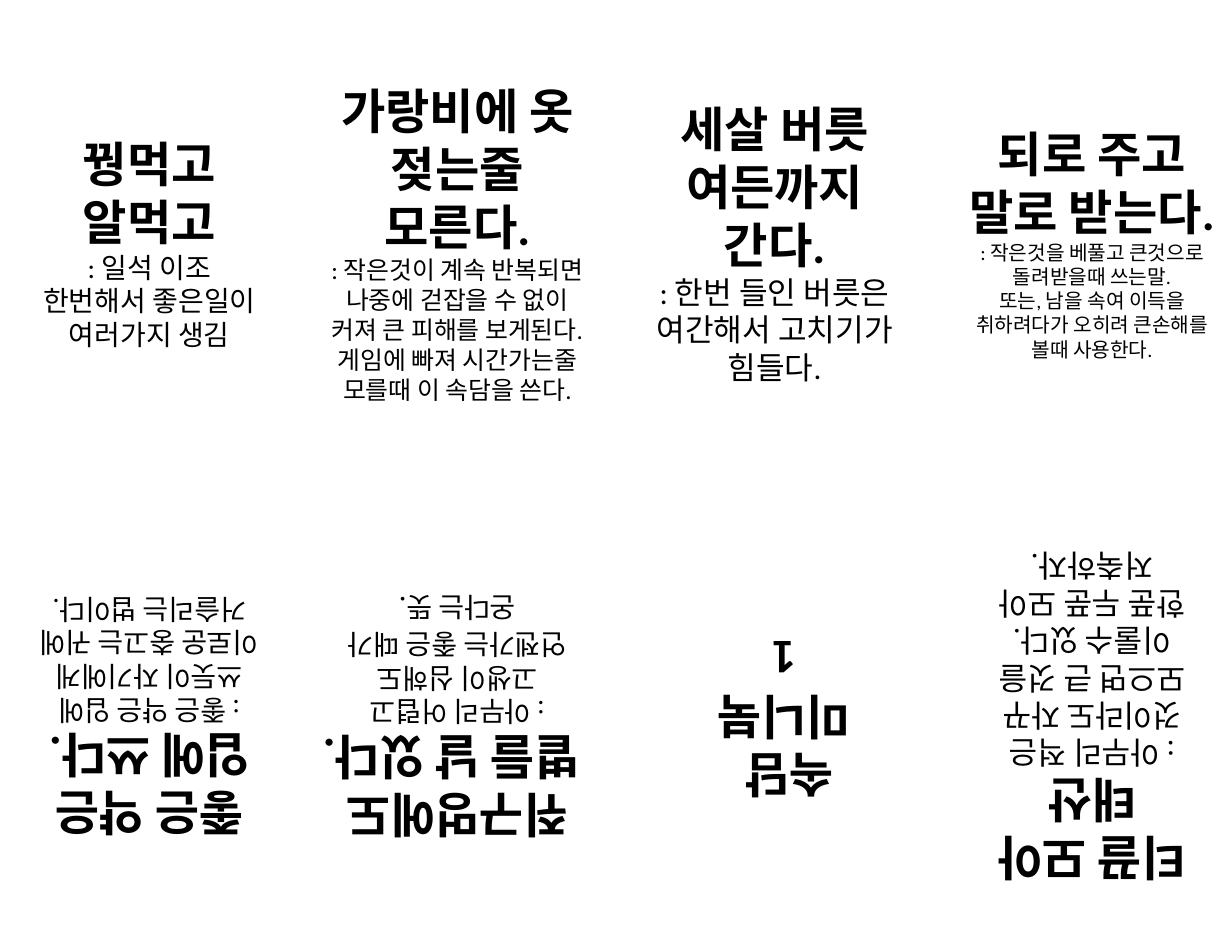
from pptx import Presentation
from pptx.dml.color import RGBColor
from pptx.enum.dml import MSO_LINE
from pptx.enum.shapes import MSO_SHAPE
from pptx.enum.text import MSO_ANCHOR, PP_ALIGN
from pptx.util import Pt

WHITE = RGBColor(0xFF, 0xFF, 0xFF)
BLACK = RGBColor(0x00, 0x00, 0x00)

PAGE_W, PAGE_H = Pt(180), Pt(288)
TOP_ROW, BOTTOM_ROW = Pt(12), Pt(318)
COLUMNS = [Pt(6), Pt(204), Pt(408), Pt(612)]
COVER_LEFT = Pt(414)

FRAME = {"word_wrap": True, "vertical_anchor": MSO_ANCHOR.MIDDLE,
         "margin_left": Pt(8), "margin_right": Pt(8),
         "margin_top": Pt(4), "margin_bottom": Pt(4)}
HEADING = {"name": "Calibri", "size": Pt(31), "bold": True}
BODY = {"name": "Calibri", "bold": False}

# Each page: proverb, body size, explanation paragraphs
TOP_PAGES = [
    ("꿩먹고 알먹고", 18, [": 일석 이조", "한번해서 좋은일이 여러가지 생김"]),
    ("가랑비에 옷 젖는줄 모른다.", 16,
     [": 작은것이 계속 반복되면 나중에 걷잡을 수 없이 커져 큰 피해를 보게된다. "
      "게임에 빠져 시간가는줄 모를때 이 속담을 쓴다."]),
    ("세살 버릇 여든까지 간다.", 20,
     [": 한번 들인 버릇은 여간해서 고치기가 힘들다."]),
    ("되로 주고 말로 받는다.", 13,
     [": 작은것을 베풀고 큰것으로 돌려받을때 쓰는말.",
      "또는, 남을 속여 이득을 취하려다가 오히려 큰손해를 볼때 사용한다."]),
]
BOTTOM_PAGES = [
    ("좋은 약은 입에 쓰다.", 18,
     [": 좋은 약은 입에 쓰듯이 자기에게 이로운 충고는 귀에 거슬리는 법이다."]),
    ("쥐구멍에도 볕들 날 있다.", 18,
     [": 아무리 어렵고 고생이 심해도 언젠가는 좋은 때가 온다는 뜻"]),
    None,  # the cover takes this place
    ("티끌 모아 태산", 20,
     [": 아무리 적은 것이라도 자꾸 모으면 큰 것을 이룰수 있다.",
      "한푼 두푼 모아 저축하자."]),
]
COVER_LINES = ["속담 ", "미니북", "1"]


def apply(target, values):
    for name, value in values.items():
        setattr(target, name, value)


def add_page(s, left, top):
    """Add one booklet page; the bottom row is upside down for folding."""
    sp = s.shapes.add_shape(MSO_SHAPE.RECTANGLE, left, top, PAGE_W, PAGE_H)
    sp.shadow.inherit = False
    sp.rotation = 180 if top == BOTTOM_ROW else 0
    sp.fill.solid()
    sp.fill.fore_color.rgb = WHITE
    sp.line.color.rgb = WHITE
    apply(sp.line, {"width": Pt(0.25), "dash_style": MSO_LINE.DASH})
    apply(sp.text_frame, FRAME)
    return sp.text_frame


def add_run(p, text, font):
    r = p.add_run()
    r.text = text
    apply(r.font, font)
    r.font.color.rgb = BLACK


def add_paragraphs(tf, lines):
    """Write (text, font) pairs as centred paragraphs."""
    for i, (text, font) in enumerate(lines):
        p = tf.add_paragraph() if i else tf.paragraphs[0]
        p.alignment = PP_ALIGN.CENTER
        add_run(p, text, font)


def add_proverb(s, left, top, proverb, size, explanation):
    tf = add_page(s, left, top)
    body = {**BODY, "size": Pt(size)}
    add_paragraphs(tf, [(proverb, HEADING)] + [(t, body) for t in explanation])
    return tf


def main():
    prs = Presentation()
    prs.slide_width, prs.slide_height = Pt(792), Pt(612)
    s = prs.slides.add_slide(prs.slide_layouts[6])

    # Proverb pages
    frames = {}
    for top, pages in ((TOP_ROW, TOP_PAGES), (BOTTOM_ROW, BOTTOM_PAGES)):
        for left, page in zip(COLUMNS, pages):
            if page:
                frames[page[0]] = add_proverb(s, left, top, *page)

    # Larger full stop after the mouse hole proverb
    p = frames["쥐구멍에도 볕들 날 있다."].paragraphs[-1]
    add_run(p, ".", {**BODY, "size": Pt(20)})

    # Cover
    add_paragraphs(add_page(s, COVER_LEFT, BOTTOM_ROW),
                   [(text, HEADING) for text in COVER_LINES])

    prs.save("out.pptx")


if __name__ == "__main__":
    main()
